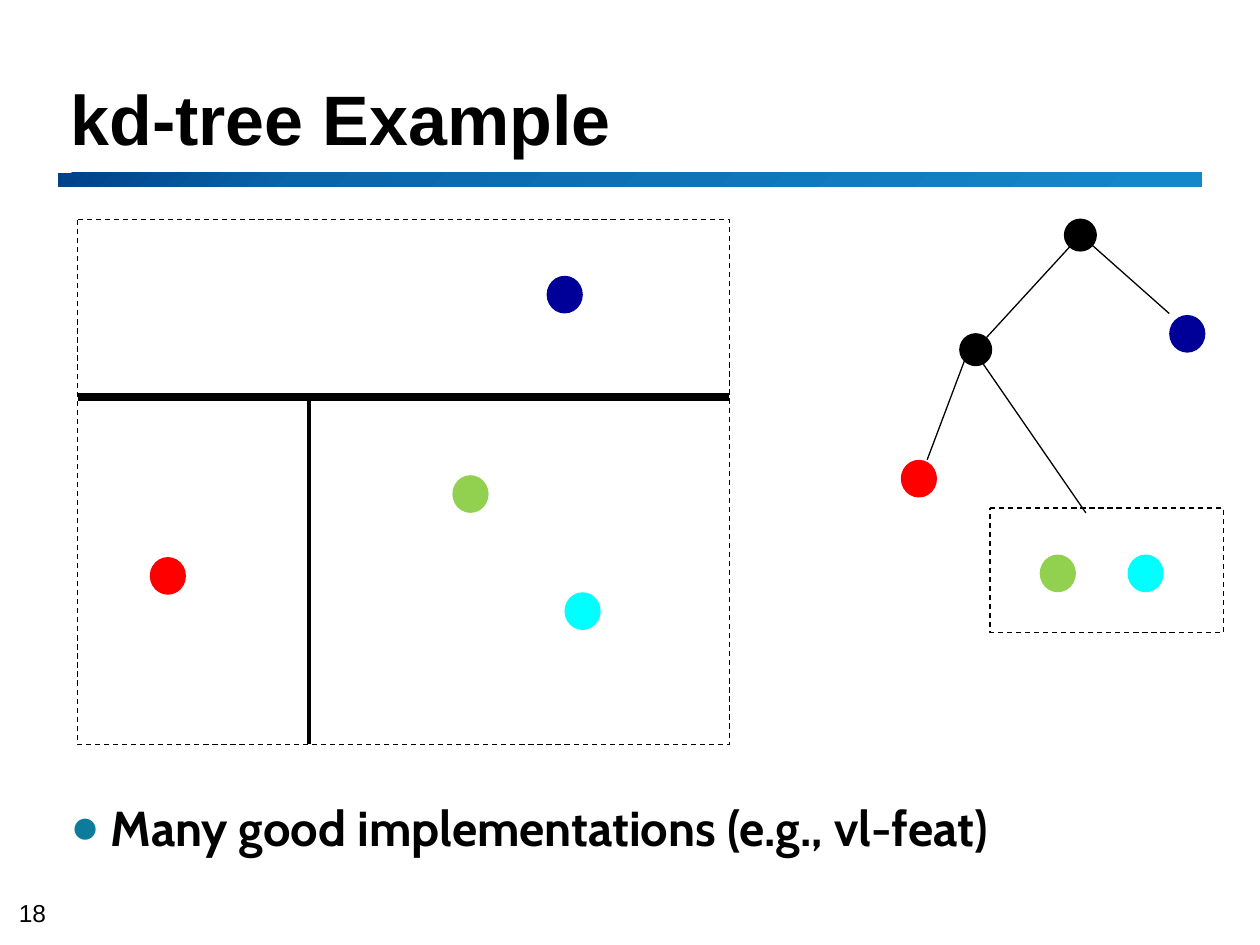
from copy import deepcopy

from lxml import etree
from pptx import Presentation
from pptx.dml.color import RGBColor
from pptx.enum.dml import MSO_LINE
from pptx.enum.shapes import MSO_CONNECTOR, MSO_SHAPE
from pptx.enum.text import MSO_ANCHOR
from pptx.oxml.ns import qn
from pptx.util import Cm, Pt

RECTANGLE = MSO_SHAPE.RECTANGLE
ROUNDED = MSO_SHAPE.ROUNDED_RECTANGLE
OVAL = MSO_SHAPE.OVAL
STRAIGHT = MSO_CONNECTOR.STRAIGHT
DASH = MSO_LINE.DASH
TOP, BOTTOM = MSO_ANCHOR.TOP, MSO_ANCHOR.BOTTOM

BLACK, NAVY, RED, GREEN, CYAN = "000000", "000099", "FF0000", "92D050", "00FFFF"
BULLET_COLOR = "0C7B9C"
BAR_STOPS = [(0, "004187"), (0.21, "0A64A8"), (0.96, "1487C8")]

REGIONS = [(1.57, 4.42, 13.13, 10.59), (19.96, 10.24, 4.7, 2.51)]
SPLITS = [(1.57, 8, 14.69, 8, 4.5), (6.22, 8, 6.22, 14.99, 2.25)]
TREE_NODES = [(21.46, 4.42), (19.35, 6.73)]
TREE_EDGES = [
    (21.89, 4.62, 19.56, 7.16),
    (21.89, 4.83, 23.57, 6.32),
    (19.56, 6.96, 18.69, 9.27),
    (19.56, 6.96, 21.89, 10.34),
]
POINTS = [
    (11.02, 5.56, NAVY), (23.57, 6.35, NAVY),
    (3.02, 11.23, RED), (18.16, 9.27, RED),
    (9.12, 9.58, GREEN), (11.38, 11.94, CYAN),
    (20.96, 11.18, GREEN), (22.73, 11.18, CYAN),
]


def color(value):
    return RGBColor.from_string(value)


def set_all(target, values):
    for key, value in values.items():
        setattr(target, key, value)


def add_plain(slide, kind, box, fill=None, outline=None):
    shape = slide.shapes.add_shape(kind, *map(Cm, box))
    shape.shadow.inherit = False
    if fill:
        shape.fill.solid()
        shape.fill.fore_color.rgb = color(fill)
    else:
        shape.fill.background()
    if outline:
        shape.line.color.rgb = color(outline)
        shape.line.width = Pt(0.75)
    else:
        shape.line.fill.background()
    return shape


def add_title_bar(slide):
    bar = add_plain(slide, RECTANGLE, (1.17, 3.48, 23.06, 0.28))
    bar.fill.gradient()
    bar.fill.gradient_angle = 315
    stop_list = bar.fill._fill._gradFill.find(qn("a:gsLst"))
    stop_list.append(deepcopy(stop_list[-1]))
    for stop, (position, value) in zip(bar.fill.gradient_stops, BAR_STOPS):
        set_all(stop, {"position": position})
        stop.color.rgb = color(value)


def add_region(slide, box):
    region = add_plain(slide, ROUNDED, box, outline=BLACK)
    region.adjustments[0] = 0
    region.line.dash_style = DASH


def add_line(slide, x1, y1, x2, y2, width=0.75):
    line = slide.shapes.add_connector(STRAIGHT, *map(Cm, (x1, y1, x2, y2)))
    line.line.color.rgb = color(BLACK)
    line.line.width = Pt(width)
    etree.SubElement(line._element.spPr, qn("a:effectLst"))


def add_bullet(paragraph, char, value):
    props = paragraph._p.get_or_add_pPr()
    props.set("marL", str(Cm(0.81)))
    props.set("indent", str(-Cm(0.81)))
    bullet_color = etree.SubElement(props, qn("a:buClr"))
    etree.SubElement(bullet_color, qn("a:srgbClr"), val=value)
    etree.SubElement(props, qn("a:buFont"), typeface="Arial")
    etree.SubElement(props, qn("a:buChar"), char=char)


def add_text(slide, text, box, size, font="Arial", bold=False, anchor=TOP,
             inset=(0.25, 0.13), spacing=None, bullet=None):
    frame = slide.shapes.add_textbox(*map(Cm, box)).text_frame
    side, edge = map(Cm, inset)
    set_all(frame, {
        "word_wrap": True, "vertical_anchor": anchor,
        "margin_left": side, "margin_right": side,
        "margin_top": edge, "margin_bottom": edge,
    })
    paragraph = frame.paragraphs[0]
    if spacing:
        paragraph.line_spacing = Pt(spacing)
    if bullet:
        add_bullet(paragraph, bullet, BULLET_COLOR)
    run = paragraph.add_run()
    run.text = text
    set_all(run.font, {"name": font, "size": Pt(size), "bold": bold})
    run.font.color.rgb = color(BLACK)


def main():
    deck = Presentation()
    set_all(deck, {"slide_width": Cm(25.4), "slide_height": Cm(19.05)})
    slide = deck.slides.add_slide(deck.slide_layouts[6])

    add_text(slide, "18", (0.38, 18.11, 0.74, 0.58), 14,
             anchor=BOTTOM, inset=(0, 0))
    add_title_bar(slide)
    add_text(slide, "kd-tree Example", (1.17, 0.84, 23.01, 2.51), 40,
             bold=True, anchor=BOTTOM, spacing=36)
    add_text(slide, "Many good implementations (e.g., vl-feat)",
             (1.17, 16.18, 23.11, 1.3), 28, font="Cabin", bold=True,
             spacing=27, bullet="●")

    for box in REGIONS:
        add_region(slide, box)
    for split in SPLITS:
        add_line(slide, *split)
    for left, top in TREE_NODES:
        add_plain(slide, OVAL, (left, top, 0.64, 0.64), BLACK, BLACK)
    for edge in TREE_EDGES:
        add_line(slide, *edge)
    for left, top, fill in POINTS:
        add_plain(slide, OVAL, (left, top, 0.73, 0.76), fill)

    deck.save("out.pptx")


if __name__ == "__main__":
    main()
